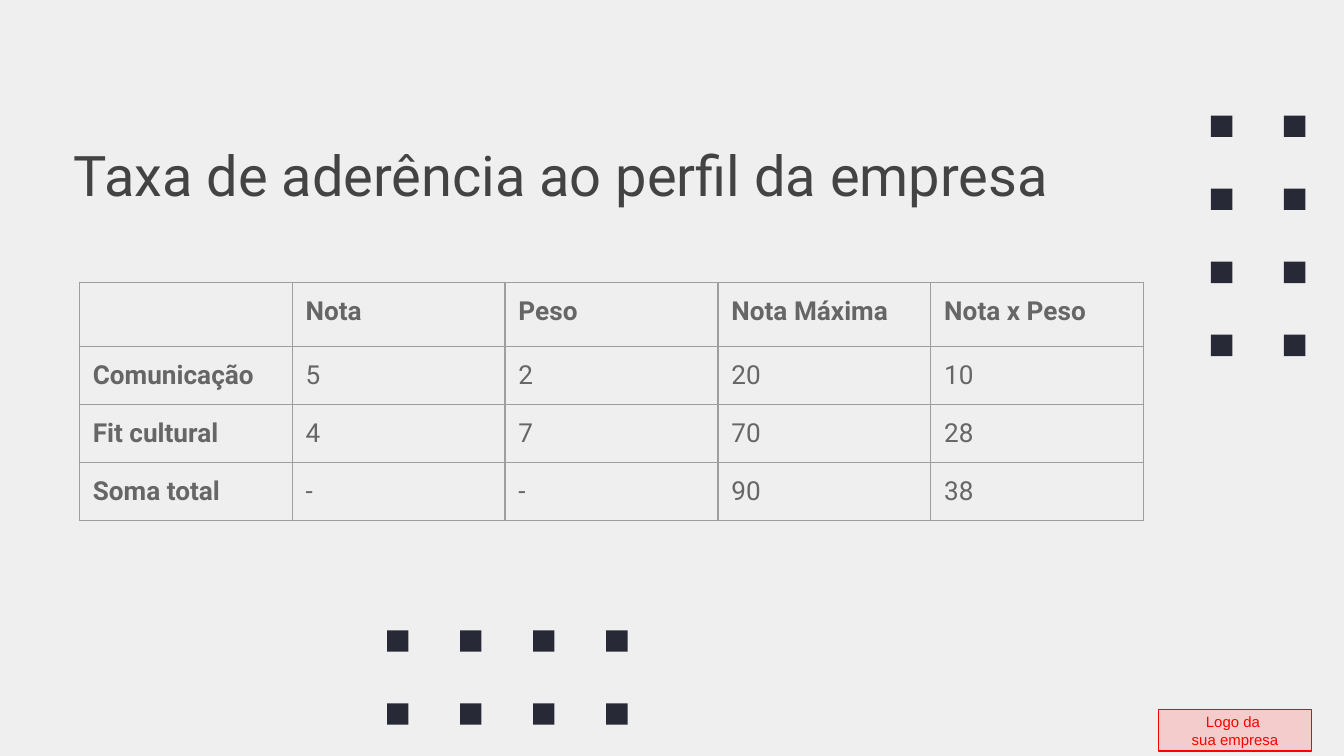
import pptx
import pptx.dml.color
import pptx.enum.shapes
import pptx.enum.text
import pptx.oxml.ns
import pptx.util
from lxml import etree

Inches = pptx.util.Inches
Pt = pptx.util.Pt
RECT = pptx.enum.shapes.MSO_SHAPE.RECTANGLE
ANCHOR = pptx.enum.text.MSO_ANCHOR
ALIGN = pptx.enum.text.PP_ALIGN

COLORS = {
    "back": "EFEFEF", "dot": "272A36", "title": "434343", "text": "666666",
    "grid": "9E9E9E", "pink": "F4CCCC", "red": "FF0000",
}
ROWS = [
    ["", "Nota", "Peso", "Nota Máxima", "Nota x Peso"],
    ["Comunicação", "5", "2", "20", "10"],
    ["Fit cultural", "4", "7", "70", "28"],
    ["Soma total", "-", "-", "90", "38"],
]
STEP = 1.63 / 3  # four dots span 1.63 inches


def color(name):
    return pptx.dml.color.RGBColor.from_string(COLORS[name])


def style(par, size, face, tone, bold=False, align=ALIGN.LEFT):
    font = par.font
    font.size, font.name, font.bold = Pt(size), face, bold
    font.color.rgb = color(tone)
    par.alignment = align


def pad(frame):
    frame.margin_left = frame.margin_right = Inches(0.1)
    frame.margin_top = frame.margin_bottom = Inches(0.1)


def add_box(slide, left, top, width, height, fill):
    box = slide.shapes.add_shape(
        RECT, Inches(left), Inches(top), Inches(width), Inches(height))
    box.shadow.inherit = False
    box.fill.solid()
    box.fill.fore_color.rgb = color(fill)
    box.line.fill.background()
    return box


def add_dots(slide, left, top, cols, rows):
    for row in range(rows):
        for col in range(cols):
            add_box(slide, left + col * STEP, top + row * STEP, 0.16, 0.16, "dot")


def add_title(slide, text):
    title = slide.shapes.title
    title.left, title.top = Inches(0.45), Inches(1)
    title.width, title.height = Inches(7.92), Inches(0.87)
    frame = title.text_frame
    frame.text = text
    frame.word_wrap = True
    frame.auto_size = pptx.enum.text.MSO_AUTO_SIZE.NONE
    frame.vertical_anchor = ANCHOR.TOP
    pad(frame)
    par = frame.paragraphs[0]
    style(par, 30, "Roboto", "title")
    par.line_spacing = 0.9
    par.space_before = Pt(0)


def add_edges(cell):
    qn = pptx.oxml.ns.qn
    props = cell._tc.get_or_add_tcPr()
    for side in ("a:lnL", "a:lnR", "a:lnT", "a:lnB"):
        line = etree.SubElement(props, qn(side), w=str(Pt(0.75)))
        fill = etree.SubElement(line, qn("a:solidFill"))
        etree.SubElement(fill, qn("a:srgbClr"), val=COLORS["grid"])


def add_grid(slide, rows):
    heights = [0.48] + [0.43] * (len(rows) - 1)
    frame = slide.shapes.add_table(
        len(rows), len(rows[0]), Inches(0.59), Inches(2.1),
        Inches(7.92), Inches(sum(heights)))
    table = frame.table
    table.first_row = table.horz_banding = False
    for row, height in zip(table.rows, heights):
        row.height = Inches(height)
    for i, row in enumerate(rows):
        for j, text in enumerate(row):
            cell = table.cell(i, j)
            cell.text = text
            pad(cell)
            add_edges(cell)
            cell.fill.background()
            # Headings run along the first row and the first column
            style(cell.text_frame.paragraphs[0], 14, "Roboto", "text",
                  bold=i == 0 or j == 0)


def add_badge(slide, lines):
    box = add_box(slide, 8.62, 5.28, 1.14, 0.31, "pink")
    box.line.color.rgb = color("red")
    box.line.width = Pt(0.75)
    frame = box.text_frame
    frame.text = "\n".join(lines)
    frame.word_wrap = True
    frame.vertical_anchor = ANCHOR.MIDDLE
    pad(frame)
    for par in frame.paragraphs:
        style(par, 8, "Arial", "red", align=ALIGN.CENTER)


def main():
    # Widescreen page, 16 to 9
    deck = pptx.Presentation()
    deck.slide_width, deck.slide_height = Inches(10), Inches(10 * 9 / 16)
    slide = deck.slides.add_slide(deck.slide_layouts[5])
    slide.background.fill.solid()
    slide.background.fill.fore_color.rgb = color("back")

    # Dot patterns at the bottom and on the right
    add_dots(slide, 2.88, 4.69, cols=4, rows=2)
    add_dots(slide, 9.01, 0.86, cols=2, rows=4)

    # Content
    add_grid(slide, ROWS)
    add_badge(slide, ["Logo da ", "sua empresa"])
    add_title(slide, "Taxa de aderência ao perfil da empresa")

    deck.save("out.pptx")


if __name__ == "__main__":
    main()
